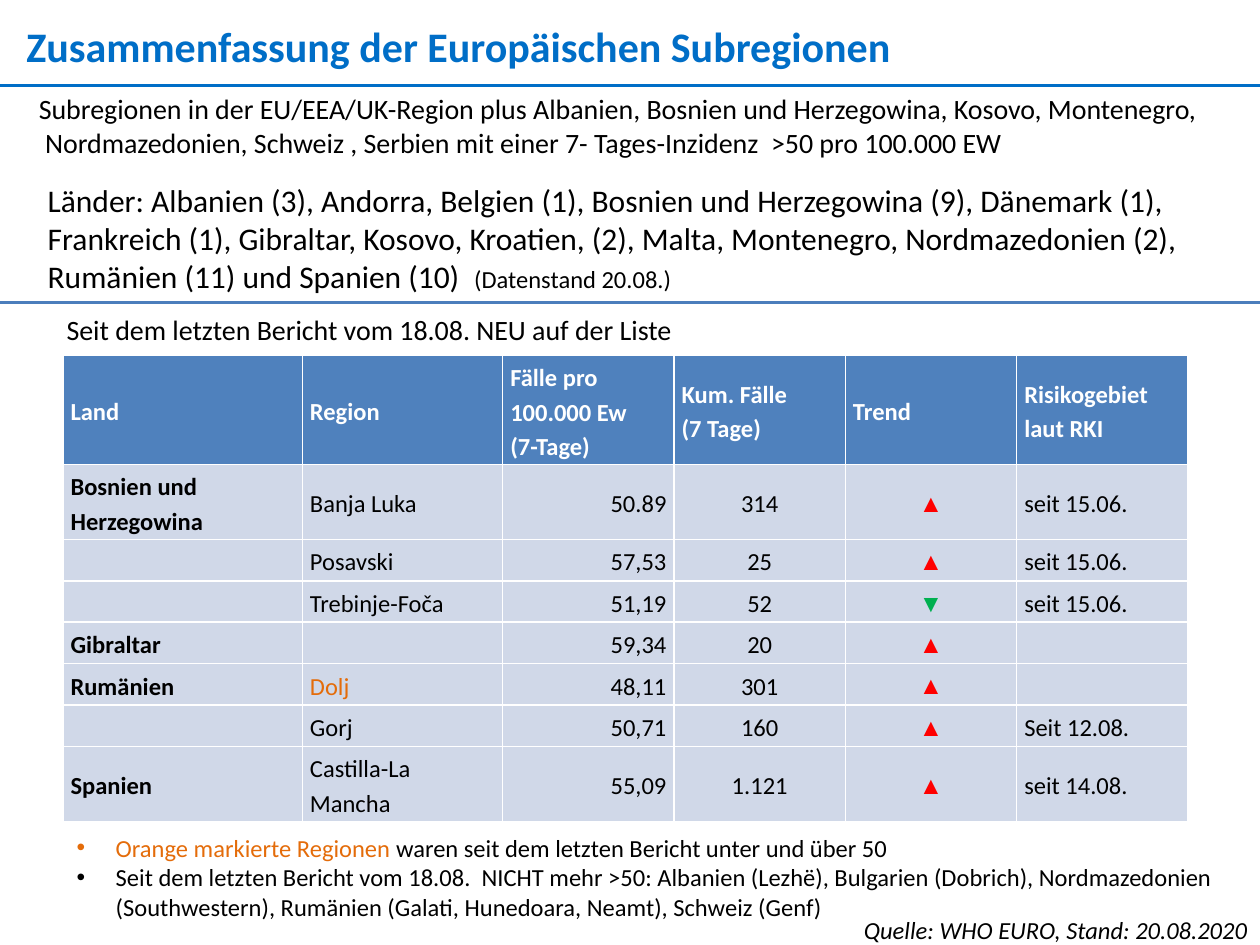
from lxml.etree import SubElement
from pptx import Presentation
from pptx.dml.color import RGBColor
from pptx.enum.shapes import MSO_CONNECTOR
from pptx.enum.text import MSO_ANCHOR, MSO_AUTO_SIZE, PP_ALIGN
from pptx.oxml.ns import qn
from pptx.util import Inches, Pt

COLUMN = ROW = Inches(0.1)
BLACK, WHITE, BLUE, ORANGE = "000000", "FFFFFF", "006EC7", "E46C0A"
HEADER_FILL, BODY_FILL = "4F81BD", "D0D8E8"
TREND_COLORS = {"▲": "FF0000", "▼": "00B050"}
COLUMN_WIDTHS = [19, 15.9, 13.6, 13.6, 13.6, 13.6]
ROW_HEIGHTS = [7.6, 5.3, 2.9, 2.9, 2.9, 2.9, 2.9, 5.3]
ALIGNMENTS = [PP_ALIGN.LEFT, PP_ALIGN.LEFT, PP_ALIGN.RIGHT,
              PP_ALIGN.CENTER, PP_ALIGN.CENTER, PP_ALIGN.LEFT]
HEADINGS = ["Land", "Region", "Fälle pro 100.000 Ew\n(7-Tage)",
            "Kum. Fälle\n(7 Tage)", "Trend", "Risikogebiet laut RKI"]
REGIONS = [
    ["Bosnien und Herzegowina", "Banja Luka", "50.89", "314", "▲", "seit 15.06."],
    ["", "Posavski", "57,53", "25", "▲", "seit 15.06."],
    ["", "Trebinje-Foča", "51,19", "52", "▼", "seit 15.06."],
    ["Gibraltar", "", "59,34", "20", "▲", ""],
    ["Rumänien", "Dolj", "48,11", "301", "▲", ""],
    ["", "Gorj", "50,71", "160", "▲", "Seit 12.08."],
    ["Spanien", "Castilla-La Mancha", "55,09", "1.121", "▲", "seit 14.08."],
]


def rgb(value):
    return RGBColor.from_string(value)


def grid(left, top, width, height):
    return (int(left * COLUMN), int(top * ROW), int(width * COLUMN), int(height * ROW))


def style(font, size, color=BLACK, bold=False, italic=False, name="Calibri"):
    font.name = name
    font.size = Pt(size)
    font.bold = bold
    font.italic = italic
    font.color.rgb = rgb(color)


def add_text(page, area, text, size, color=BLACK, bold=False, italic=False,
             align=PP_ALIGN.LEFT, margin=None):
    frame = page.shapes.add_textbox(*grid(*area)).text_frame
    frame.word_wrap = True
    frame.auto_size = MSO_AUTO_SIZE.SHAPE_TO_FIT_TEXT
    if margin is not None:
        frame.margin_left = frame.margin_right = margin
        frame.margin_top = frame.margin_bottom = margin
    para = frame.paragraphs[0]
    para.text = text
    para.alignment = align
    style(para.font, size, color, bold, italic)
    return frame


def add_rule(page, row, color, width):
    left, top, length, _ = grid(0, row, 100, 0)
    rule = page.shapes.add_connector(MSO_CONNECTOR.STRAIGHT, left, top, left + length, top)
    rule.line.color.rgb = rgb(color)
    rule.line.width = Pt(width)
    SubElement(rule._element.spPr, qn("a:effectLst"))


def add_bullet(para):
    properties = para._p.get_or_add_pPr()
    properties.set("marL", str(Inches(0.31)))
    properties.set("indent", str(-Inches(0.31)))
    bullet = properties.makeelement(qn("a:buChar"), {"char": "•"})
    font = properties.makeelement(qn("a:buFont"), {"typeface": "Arial"})
    properties.insert(0, bullet)
    properties.insert(0, font)


def add_header(page, area):
    add_text(page, area, "Zusammenfassung der Europäischen Subregionen", 24, BLUE,
             bold=True, margin=0)
    add_rule(page, 6.8, BLUE, 1.5)


def add_countries(page, area):
    frame = add_text(
        page, area,
        "Länder: Albanien (3), Andorra, Belgien (1), Bosnien und Herzegowina (9), "
        "Dänemark (1), Frankreich (1), Gibraltar, Kosovo, Kroatien, (2), Malta, "
        "Montenegro, Nordmazedonien (2), Rumänien (11) und Spanien (10)  ", 18)
    span = frame.paragraphs[0].add_run()
    span.text = "(Datenstand 20.08.)"
    span.font.size = Pt(14)
    add_rule(page, 24, "4B7EBC", 1.75)


def fill_cell(cell, text, row, column):
    is_header = row == 0
    cell.fill.solid()
    cell.fill.fore_color.rgb = rgb(HEADER_FILL if is_header else BODY_FILL)
    cell.vertical_anchor = MSO_ANCHOR.MIDDLE
    cell.margin_left = cell.margin_right = Inches(0.06)
    cell.margin_top = cell.margin_bottom = Inches(0.03)
    cell.text = text
    color = WHITE if is_header else ORANGE if text == "Dolj" else TREND_COLORS.get(text, BLACK)
    name = "Arial" if text in TREND_COLORS else "Calibri"
    for para in cell.text_frame.paragraphs:
        para.line_spacing = 1.15
        para.alignment = PP_ALIGN.LEFT if is_header else ALIGNMENTS[column]
        style(para.font, 14, color, bold=is_header or column == 0, name=name)
        if not text:
            SubElement(para._p, qn("a:endParaRPr"), sz="1400")


def add_region_table(page, area):
    table = page.shapes.add_table(len(ROW_HEIGHTS), len(COLUMN_WIDTHS), *grid(*area)).table
    table.horz_banding = False
    for column, width in zip(table.columns, COLUMN_WIDTHS):
        column.width = int(width * COLUMN)
    for row, height in zip(table.rows, ROW_HEIGHTS):
        row.height = int(height * ROW)
    for row, texts in enumerate([HEADINGS, *REGIONS]):
        for column, text in enumerate(texts):
            fill_cell(table.cell(row, column), text, row, column)


def add_remarks(page, area):
    frame = add_text(page, area, "", 14)
    marked = frame.paragraphs[0]
    for text, color in (("Orange markierte Regionen ", ORANGE),
                        ("waren seit dem letzten Bericht unter und über 50", BLACK)):
        span = marked.add_run()
        span.text = text
        span.font.color.rgb = rgb(color)
    removed = frame.add_paragraph()
    removed.text = ("Seit dem letzten Bericht vom 18.08.  NICHT mehr >50: Albanien (Lezhë), "
                    "Bulgarien (Dobrich), Nordmazedonien  (Southwestern), "
                    "Rumänien (Galati, Hunedoara, Neamt), Schweiz (Genf)")
    style(removed.font, 14)
    for para in frame.paragraphs:
        add_bullet(para)


def build_summary(page):
    add_header(page, (2.1, 1.6, 96.3, 4))
    add_text(page, (53.9, 72.1, 46.1, 3.4), "Quelle: WHO EURO, Stand: 20.08.2020", 14,
             italic=True, align=PP_ALIGN.RIGHT)
    add_text(page, (2.1, 6.8, 94.3, 6.4),
             "Subregionen in der EU/EEA/UK-Region plus Albanien, Bosnien und Herzegowina, "
             "Kosovo, Montenegro,  Nordmazedonien, Schweiz , Serbien mit einer "
             "7- Tages-Inzidenz  >50 pro 100.000 EW", 16)
    add_text(page, (4.3, 24.3, 79.5, 3.7),
             "Seit dem letzten Bericht vom 18.08. NEU auf der Liste", 16)
    add_remarks(page, (5.1, 65.6, 94.5, 8.1))
    add_region_table(page, (5, 28.2, 89.1, 36.9))
    add_countries(page, (2.8, 13.9, 92.1, 10.1))


def main():
    deck = Presentation()
    deck.slide_width = 100 * COLUMN
    deck.slide_height = 75 * ROW
    build_summary(deck.slides.add_slide(deck.slide_layouts[6]))
    deck.save("out.pptx")


if __name__ == "__main__":
    main()
